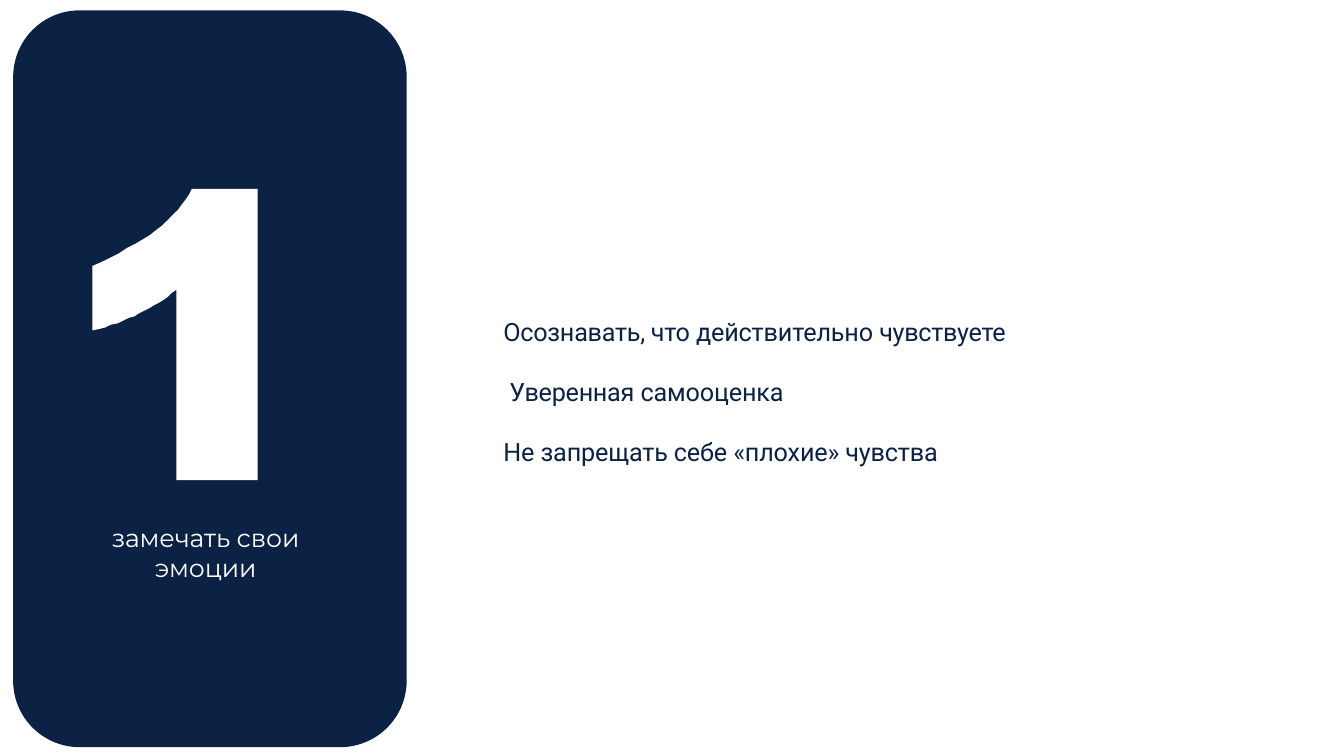
from pptx import Presentation
from pptx.dml.color import RGBColor as RGB
from pptx.enum.shapes import MSO_SHAPE as Shape
from pptx.enum.text import MSO_ANCHOR as Anchor, MSO_AUTO_SIZE as Fit, PP_ALIGN as Align
from pptx.util import Pt
from lxml.etree import SubElement

NAVY = RGB(0x0C, 0x22, 0x44)
WHITE = RGB(0xFF, 0xFF, 0xFF)
BREAK = "\n"


def curve(start, bend, end, steps=16):
    for i in range(steps + 1):
        t = i / steps
        yield tuple(
            (1 - t) ** 2 * a + 2 * t * (1 - t) * b + t * t * c
            for a, b, c in zip(start, bend, end)
        )


class Board:
    size = 18

    def __init__(self, deck):
        self.slide = deck.slides.add_slide(deck.slide_layouts[1])

    def place(self, shape, box):
        shape.left, shape.top, shape.width, shape.height = map(Pt, box)

    def paint(self, shape, color):
        shape.shadow.inherit = False
        shape.fill.solid()
        shape.fill.fore_color.rgb = color

    def panel(self, box, radius, color):
        shape = self.slide.shapes.add_shape(Shape.ROUNDED_RECTANGLE, *map(Pt, box))
        shape.adjustments[0] = radius / min(box[2:])
        self.paint(shape, color)
        shape.line.color.rgb = color
        shape.line.width = Pt(1)

    def outline(self, points, color):
        pen = self.slide.shapes.build_freeform(*points[0], scale=Pt(1))
        pen.add_line_segments(points[1:], close=True)
        shape = pen.convert_to_shape()
        self.paint(shape, color)
        shape.line.fill.background()

    def text(self, holder, box, paras, font, color, align, lead, indent=0):
        self.place(holder, box)
        holder.element.getparent().append(holder.element)
        frame = holder.text_frame
        frame.word_wrap = True
        frame.auto_size = Fit.NONE
        frame.vertical_anchor = Anchor.TOP
        frame.margin_left = frame.margin_right = frame.margin_bottom = 0
        frame.margin_top = Pt(1)
        for i, runs in enumerate(paras):
            para = frame.add_paragraph() if i else frame.paragraphs[0]
            para.alignment = align
            para.line_spacing = lead
            para.space_before = para.space_after = Pt(0)
            props = para._p.get_or_add_pPr()
            props.set("marL", str(Pt(indent)))
            props.set("indent", "0")
            SubElement(props, "{http://schemas.openxmlformats.org/drawingml/2006/main}buNone")
            for words, gap in runs:
                if words == BREAK:
                    para.add_line_break()
                    continue
                run = para.add_run()
                run.text = words
                run.font.name = font
                run.font.size = Pt(self.size)
                run.font.bold = False
                run.font.color.rgb = color
                run._r.get_or_add_rPr().set("spc", str(round(gap * 100)))


def main():
    deck = Presentation()
    deck.slide_width, deck.slide_height = Pt(960), Pt(540)
    board = Board(deck)
    title, body = board.slide.placeholders

    board.panel((9.9, 7.9, 280.1, 525.3), 47, NAVY)
    digit = [
        (184, 134.6),
        *curve((137, 134.6), (121.7, 166.4), (66, 189.5)),
        *curve((66, 236.2), (102.8, 226.2), (126, 207)),
        (126, 343.4),
        (184, 343.4),
    ]
    board.outline(digit, WHITE)

    board.text(
        title, (71.3, 371.8, 151.2, 45.4),
        [[("замечать ", -0.1), ("свои", 0)], [("эмоции", -0.1)]],
        "Montserrat", WHITE, Align.CENTER, 1,
    )
    board.text(
        body, (358.6, 203, 364, 125.3),
        [
            [
                ("Осознавать, что ", -0.2), ("действительно ", -0.1),
                ("чувствуете", -0.2), (BREAK, 0),
                (" Уверенная ", -0.2), ("самооценка", -0.1),
            ],
            [("Не запрещать себе «плохие» чувства", -0.1)],
        ],
        "Roboto", NAVY, Align.LEFT, 2, 1,
    )
    deck.save("out.pptx")


if __name__ == "__main__":
    main()
